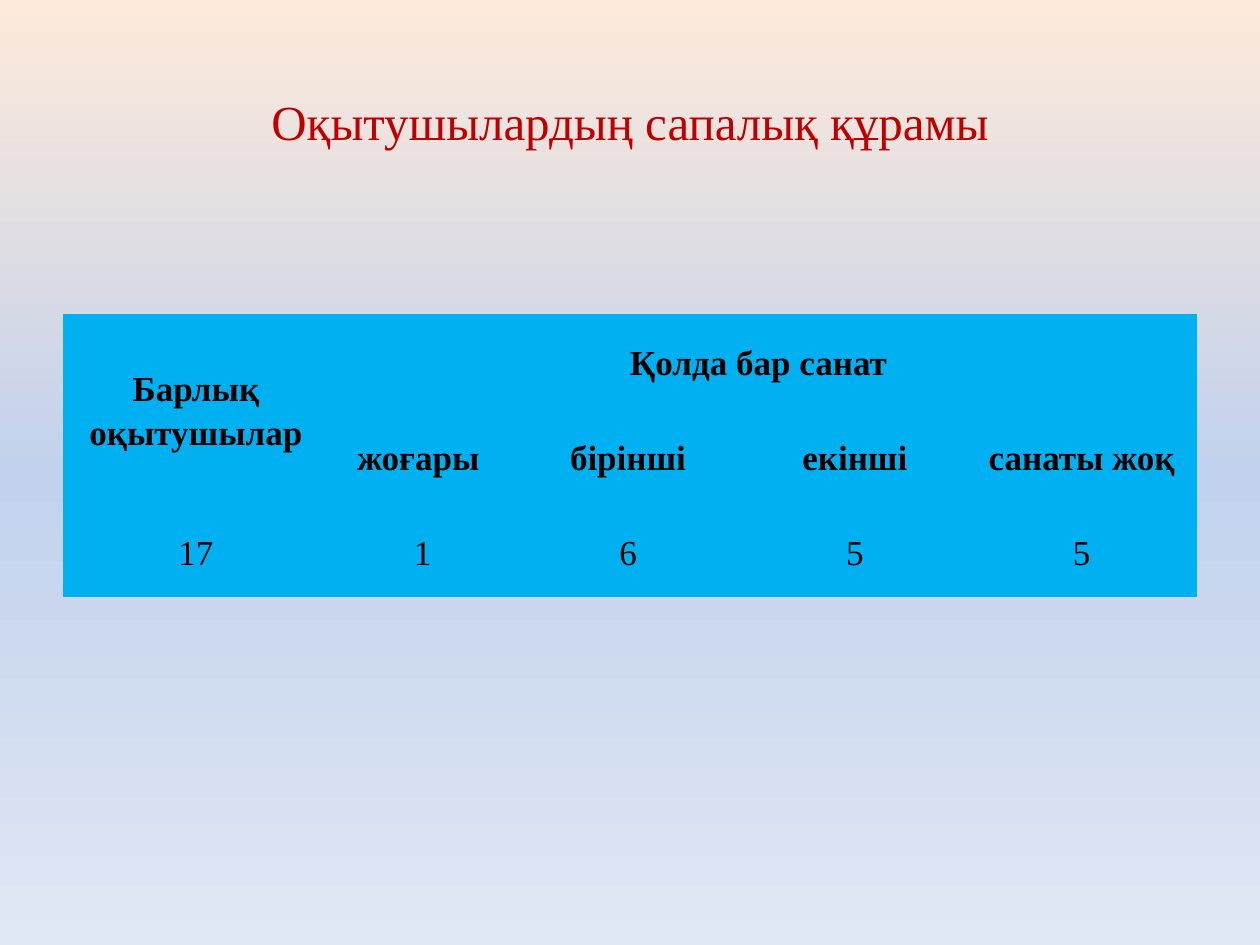
from copy import deepcopy

from pptx import Presentation
from pptx.dml.color import RGBColor
from pptx.enum.text import MSO_ANCHOR, MSO_AUTO_SIZE, PP_ALIGN
from pptx.oxml.ns import qn
from pptx.util import Inches, Pt

PEACH = RGBColor(0xFD, 0xEA, 0xDA)
BLUE = RGBColor(0xC2, 0xD1, 0xED)
PALE = RGBColor(0xE1, 0xE8, 0xF5)
CYAN = RGBColor(0x00, 0xB0, 0xF0)
RED = RGBColor(0xC0, 0x00, 0x00)
BLACK = RGBColor(0x00, 0x00, 0x00)
NO_GRID_STYLE = "{2D5ABB26-0587-4C30-8999-92F81FD0307C}"

COLUMNS = [2.14, 1.46, 1.8, 1.8, 1.8]
ROW_HEIGHT = 0.74
ROWS = [
    ["Барлық оқытушылар", "Қолда бар санат ", None, None, None],
    [None, "жоғары ", "бірінші", "екінші", "санаты жоқ"],
    ["17", "1", "6", "5", "5"],
]
CELL_FORMAT = {
    "vertical_anchor": MSO_ANCHOR.MIDDLE,
    "margin_left": Inches(0.04),
    "margin_right": Inches(0.07),
    "margin_top": Inches(0.03),
    "margin_bottom": Inches(0.03),
}


def write(frame, text, size, color, bold=False):
    para = frame.paragraphs[0]
    para.alignment = PP_ALIGN.CENTER
    span = para.add_run()
    span.text = text
    font_format = {"name": "Times New Roman", "size": Pt(size), "bold": bold}
    for name, value in font_format.items():
        setattr(span.font, name, value)
    span.font.color.rgb = color
    return para


deck = Presentation()
deck.slide_width = Inches(10)
deck.slide_height = Inches(7.5)
slide = deck.slides.add_slide(deck.slide_layouts[6])

backdrop = slide.background.fill
backdrop.gradient()
backdrop.gradient_angle = 270
stop_list = slide.element.find(".//" + qn("a:gsLst"))
stop_list.insert(1, deepcopy(stop_list[0]))
for stop, position, color in zip(backdrop.gradient_stops, (0, 0.5, 1), (PEACH, BLUE, PALE)):
    stop.position = position
    stop.color.rgb = color

frame = slide.shapes.add_table(
    len(ROWS), len(COLUMNS), Inches(0.5), Inches(2.49),
    Inches(sum(COLUMNS)), Inches(ROW_HEIGHT * len(ROWS)),
)
table = frame.table
table.first_row = False
table.horz_banding = False
frame.element.find(".//" + qn("a:tableStyleId")).text = NO_GRID_STYLE
for column, width in zip(table.columns, COLUMNS):
    column.width = Inches(width)
for row in table.rows:
    row.height = Inches(ROW_HEIGHT)
table.cell(0, 0).merge(table.cell(1, 0))
table.cell(0, 1).merge(table.cell(0, 4))

for row_index, texts in enumerate(ROWS):
    for column_index, text in enumerate(texts):
        cell = table.cell(row_index, column_index)
        cell.fill.solid()
        cell.fill.fore_color.rgb = CYAN
        for name, value in CELL_FORMAT.items():
            setattr(cell, name, value)
        if text:
            para = write(cell.text_frame, text, 20, BLACK, row_index < 2)
            para.line_spacing = 1.15
            para.space_after = Pt(16.8)

title = slide.shapes.add_textbox(Inches(1.22), Inches(0.68), Inches(7.56), Inches(0.57))
title.text_frame.word_wrap = True
title.text_frame.auto_size = MSO_AUTO_SIZE.SHAPE_TO_FIT_TEXT
write(title.text_frame, "Оқытушылардың сапалық құрамы", 28, RED)

deck.save("out.pptx")
